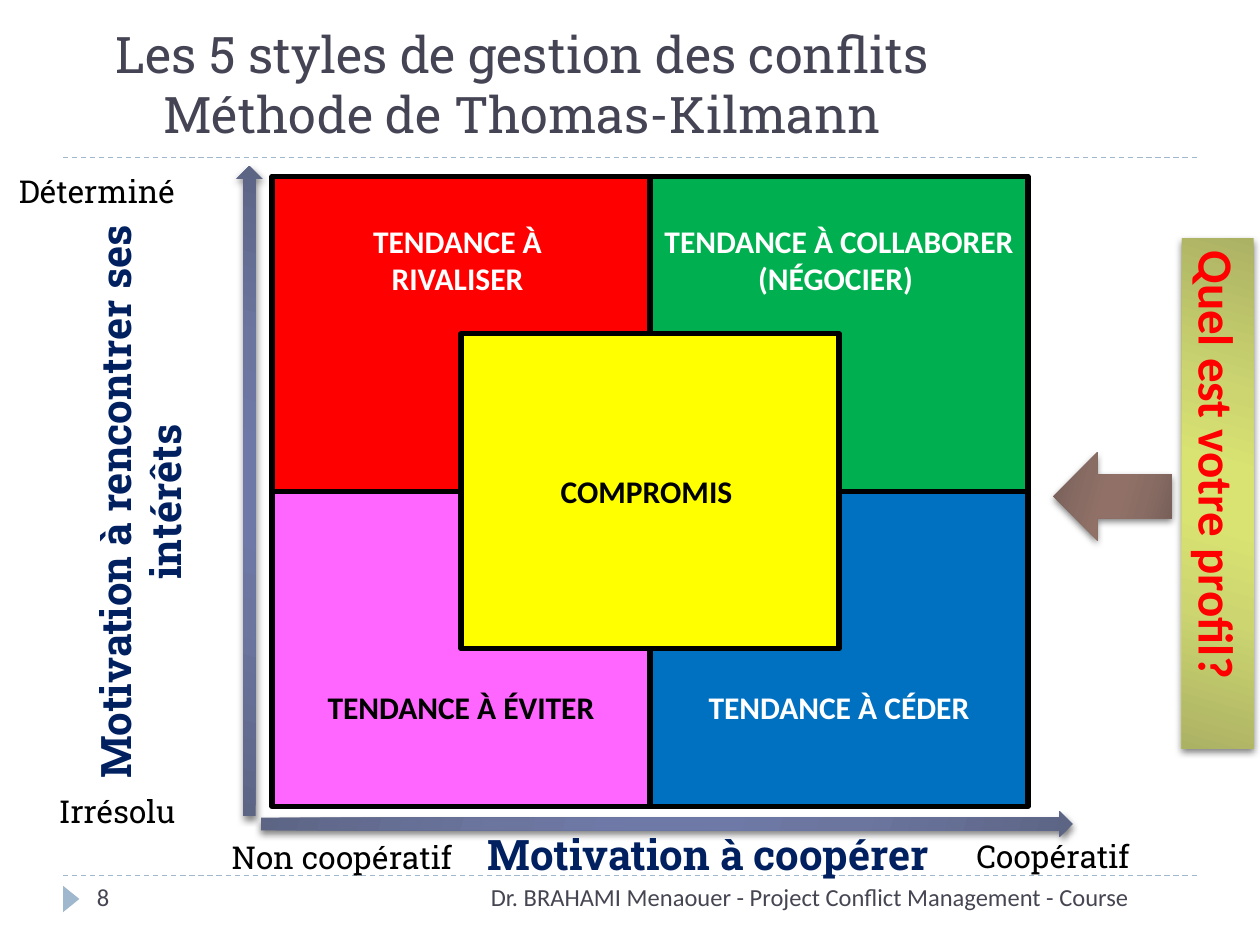
from pptx import Presentation
from pptx.dml.color import RGBColor
from pptx.enum.dml import MSO_LINE
from pptx.enum.shapes import MSO_CONNECTOR, MSO_SHAPE
from pptx.enum.text import MSO_ANCHOR, PP_ALIGN
from pptx.oxml.ns import qn
from pptx.util import Inches, Pt
from lxml import etree

LEFT, CENTER, RIGHT = PP_ALIGN.LEFT, PP_ALIGN.CENTER, PP_ALIGN.RIGHT
TOP, MIDDLE, BOTTOM = MSO_ANCHOR.TOP, MSO_ANCHOR.MIDDLE, MSO_ANCHOR.BOTTOM
RECT, TRIANGLE = MSO_SHAPE.RECTANGLE, MSO_SHAPE.ISOSCELES_TRIANGLE
RIGHT_ARROW, LEFT_ARROW = MSO_SHAPE.RIGHT_ARROW, MSO_SHAPE.LEFT_ARROW
STRAIGHT, DASH = MSO_CONNECTOR.STRAIGHT, MSO_LINE.DASH

SERIF, SANS = "Roboto Slab", "Calibri"
COLORS = {
    "title": "444455", "footer": "464653", "rule": "9FB8CD", "axis": "002060",
    "black": "000000", "white": "FFFFFF", "red": "FF0000", "green": "00B050",
    "blue": "0070C0", "pink": "FF66FF", "yellow": "FFFF00",
}
# Edge, intermediate and centre tones of each glossy fill
GLOSS = {
    "slate": ("5D6585", "6B759E", "6E79A7"),
    "lime": ("ACB264", "CCD570", "D9E371"),
    "brown": ("745E57", "896D64", "917167"),
}


def rgb(name):
    return RGBColor.from_string(COLORS[name])


class SlideBuilder:
    """Holds the style and the current slide."""

    def __init__(self, page):
        self.page = page

    def add_lines(self, shape, lines, size, font, color, bold=False,
                  align=LEFT, anchor=TOP, top_inset=0.05):
        frame = shape.text_frame
        frame.word_wrap = True
        frame.vertical_anchor = anchor
        frame.margin_top = Inches(top_inset)
        for index, line in enumerate(lines):
            para = frame.paragraphs[0] if index == 0 else frame.add_paragraph()
            para.alignment = align
            span = para.add_run()
            span.text = line
            span.font.size = Pt(size)
            span.font.name = font
            span.font.bold = bold
            span.font.color.rgb = rgb(color)

    def text(self, place, lines, size, font, color, rotation=0, **style):
        box = self.page.shapes.add_textbox(*map(Inches, place))
        box.rotation = rotation
        self.add_lines(box, lines, size, font, color, **style)

    def shape(self, kind, place, rotation=0):
        shape = self.page.shapes.add_shape(kind, *map(Inches, place))
        shape.rotation = rotation
        shape.shadow.inherit = False
        shape.line.fill.background()
        return shape

    def solid(self, kind, place, fill, rotation=0, outline=None):
        shape = self.shape(kind, place, rotation)
        shape.fill.solid()
        shape.fill.fore_color.rgb = rgb(fill)
        if outline:
            shape.line.color.rgb = rgb(outline)
            shape.line.width = Pt(3)
        return shape

    def glossy(self, kind, place, gloss, rotation=0):
        shape = self.shape(kind, place, rotation)
        shape.fill.gradient()
        shape.fill.gradient_angle = 344
        properties = shape._element.spPr
        # Symmetric gradient stops
        stops = next(properties.iter(qn("a:gsLst")))
        for stop in list(stops):
            stops.remove(stop)
        edge, between, centre = GLOSS[gloss]
        tones = (edge, between, centre, centre, between, edge)
        for percent, tone in zip((0, 30, 45, 55, 73, 100), tones):
            stop = etree.SubElement(stops, qn("a:gs"), pos=str(percent * 1000))
            etree.SubElement(stop, qn("a:srgbClr"), val=tone)
        # Soft shadow below
        effects = properties.find(qn("a:effectLst"))
        shadow = etree.SubElement(
            effects, qn("a:outerShdw"), blurRad=str(Pt(4)), dist=str(Pt(2)),
            dir="5400000", rotWithShape="0")
        tone = etree.SubElement(shadow, qn("a:srgbClr"), val=COLORS["black"])
        etree.SubElement(tone, qn("a:alpha"), val="50000")
        return shape

    def rule(self, y):
        line = self.page.shapes.add_connector(
            STRAIGHT, Inches(0.5), Inches(y), Inches(9.5), Inches(y))
        line.line.color.rgb = rgb("rule")
        line.line.width = Pt(0.75)
        line.line.dash_style = DASH
        etree.SubElement(line._element.spPr, qn("a:effectLst"))


def main():
    deck = Presentation()
    deck.slide_width, deck.slide_height = Inches(10), Inches(7.5)
    builder = SlideBuilder(deck.slides.add_slide(deck.slide_layouts[6]))

    # Rules and page marker
    for y in (6.95, 1.25):
        builder.rule(y)
    builder.solid(TRIANGLE, (0.46, 7.07, 0.21, 0.13), "rule", rotation=90)

    # Title
    builder.text((0, 0.23, 8.29, 0.96),
                 ["Les 5 styles de gestion des conflits", "Méthode de Thomas-Kilmann"],
                 28.8, SERIF, "title", align=CENTER, anchor=BOTTOM)

    # Axes and their names
    builder.glossy(RIGHT_ARROW, (-0.6, 3.8, 5.16, 0.2), "slate", rotation=270)
    builder.glossy(RIGHT_ARROW, (2.07, 6.44, 6.44, 0.2), "slate")
    for label, place, rotation in (
            ("Motivation à rencontrer ses intérêts", (-1.3, 3.53, 4.83, 0.91), 270),
            ("Motivation à coopérer", (3.57, 6.53, 4.1, 0.5), 0)):
        builder.text(place, [label], 24, SERIF, "axis", rotation,
                     bold=True, align=CENTER)

    # Axis ends
    for label, place, align in (
            ("Déterminé", (0, 1.32, 1.49, 0.4), RIGHT),
            ("Irrésolu", (0.23, 6.24, 1.26, 0.4), RIGHT),
            ("Non coopératif", (1.74, 6.6, 2.03, 0.4), LEFT),
            ("Coopératif", (7.65, 6.59, 1.58, 0.4), LEFT)):
        builder.text(place, [label], 18, SERIF, "black", align=align)

    # Four quadrants, then the compromise centred over them
    left, top, width, height = 2.16, 1.4, 3, 2.5
    upper, lower, centred = (TOP, 0.36), (MIDDLE, 0.97), (MIDDLE, 0.05)
    for column, row, fill, color, lines, (anchor, inset) in (
            (0, 1, "pink", "black", ["TENDANCE À ÉVITER"], lower),
            (0, 0, "red", "white", ["TENDANCE À ", "RIVALISER "], upper),
            (1, 1, "blue", "white", ["TENDANCE À CÉDER"], lower),
            (1, 0, "green", "white", ["TENDANCE À COLLABORER ", "(NÉGOCIER) "], upper),
            (0.5, 0.5, "yellow", "black", ["COMPROMIS "], centred)):
        place = (left + column * width, top + row * height, width, height)
        style_box = builder.solid(RECT, place, fill, outline="black")
        builder.add_lines(style_box, lines, 18, SANS, color, bold=True,
                          align=CENTER, anchor=anchor, top_inset=inset)

    # Footer
    builder.text((0.67, 6.95, 2.17, 0.4), ["8"], 14, SANS, "footer")
    builder.text((3.17, 6.95, 5.89, 0.4),
                 ["Dr. BRAHAMI Menaouer - Project Conflict Management - Course"],
                 14, SANS, "footer", align=RIGHT)

    # Question banner and its arrow
    banner = builder.glossy(RECT, (7.64, 3.63, 4.05, 0.57), "lime", rotation=90)
    builder.add_lines(banner, ["Quel est votre profil?"], 28, SANS, "red", bold=True)
    builder.glossy(LEFT_ARROW, (8.36, 3.59, 0.94, 0.7), "brown")

    deck.save("out.pptx")


if __name__ == "__main__":
    main()
